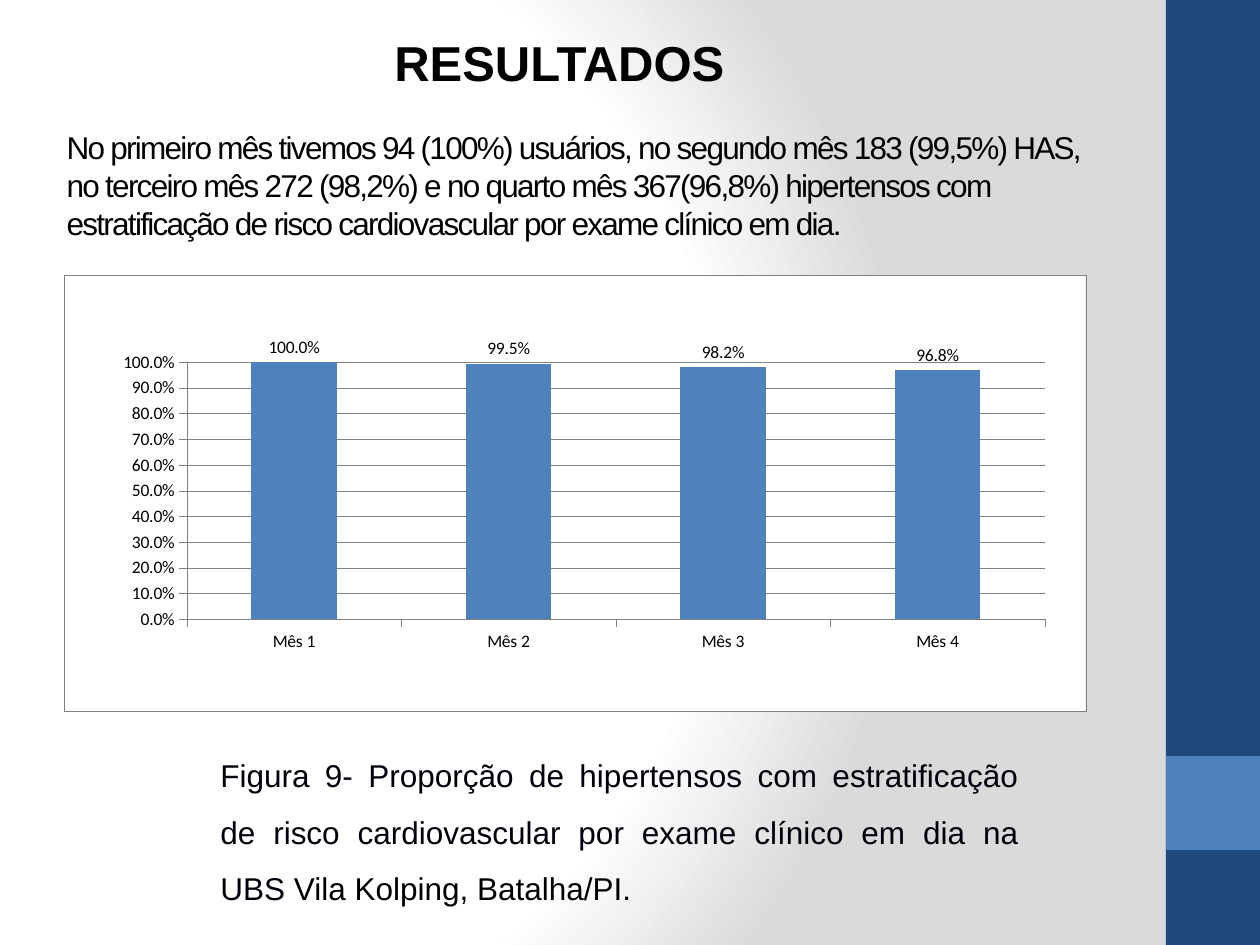
from lxml.etree import SubElement
from pptx import Presentation
from pptx.chart.data import CategoryChartData
from pptx.dml.color import RGBColor
from pptx.enum.chart import XL_CHART_TYPE, XL_LABEL_POSITION, XL_TICK_MARK
from pptx.enum.shapes import MSO_SHAPE
from pptx.enum.text import MSO_ANCHOR, MSO_AUTO_SIZE, PP_ALIGN
from pptx.oxml import parse_xml
from pptx.oxml.ns import nsdecls, qn
from pptx.util import Pt

PX = 914400 / 126
BLACK = RGBColor(0x00, 0x00, 0x00)
INK = RGBColor(0x00, 0x00, 0x0A)
WHITE = RGBColor(0xFF, 0xFF, 0xFF)
SILVER = RGBColor(0xDA, 0xDA, 0xDA)
GRAY = RGBColor(0x80, 0x80, 0x80)
NAVY = RGBColor(0x1F, 0x49, 0x7D)
BLUE = RGBColor(0x4F, 0x81, 0xBD)


def px(*values):
    """Turn pixel lengths into EMU."""
    return [round(v * PX) for v in values]


def set_background(s):
    """Give the slide a white to silver radial gradient."""
    stops = "".join(
        f'<a:gs pos="{pos}"><a:srgbClr val="{color}"/></a:gs>'
        for pos, color in ((0, WHITE), (75000, WHITE), (100000, SILVER)))
    bg = parse_xml(
        f'<p:bg {nsdecls("p", "a")}><p:bgPr><a:gradFill><a:gsLst>{stops}</a:gsLst>'
        '<a:path path="circle"><a:fillToRect l="20000" t="50000" r="100000" b="50000"/>'
        '</a:path></a:gradFill><a:effectLst/></p:bgPr></p:bg>')
    s.element.cSld.insert(0, bg)


def add_band(s, x, y, w, h, color):
    """Add a plain filled rectangle."""
    sp = s.shapes.add_shape(MSO_SHAPE.RECTANGLE, *px(x, y, w, h))
    sp.shadow.inherit = False
    sp.fill.solid()
    sp.fill.fore_color.rgb = color
    sp.line.fill.background()


def add_run(p, text, size=18, color=BLACK, bold=False, spacing=None):
    """Append a formatted run to a paragraph."""
    r = p.add_run()
    r.text = text
    f = r.font
    f.name, f.size, f.bold = "Arial", Pt(size), bold
    f.color.rgb = color
    if spacing is not None:
        r._r.get_or_add_rPr().set("spc", str(spacing * 100))


def add_title(s, x, y, w, h, text):
    """Place and fill the title placeholder."""
    sp = s.shapes.title
    sp.left, sp.top, sp.width, sp.height = px(x, y, w, h)
    tf = sp.text_frame
    tf.word_wrap = True
    tf.auto_size = MSO_AUTO_SIZE.NONE
    tf.vertical_anchor = MSO_ANCHOR.MIDDLE
    p = tf.paragraphs[0]
    p.alignment = PP_ALIGN.LEFT
    add_run(p, text, spacing=-1)


def add_text(s, x, y, w, h):
    """Add a wrapping text box and return its paragraph."""
    tf = s.shapes.add_textbox(*px(x, y, w, h)).text_frame
    tf.word_wrap = True
    tf.auto_size = MSO_AUTO_SIZE.SHAPE_TO_FIT_TEXT
    return tf.paragraphs[0]


def style_line(line):
    """Draw a thin gray line."""
    line.color.rgb = GRAY
    line.width = Pt(0.25)


def style_font(font):
    """Set the chart font."""
    font.name, font.size = "Calibri", Pt(10)
    font.color.rgb = BLACK


def style_axis(axis):
    """Format a chart axis."""
    axis.major_tick_mark = XL_TICK_MARK.OUTSIDE
    axis.minor_tick_mark = XL_TICK_MARK.NONE
    style_font(axis.tick_labels.font)
    style_line(axis.format.line)


def frame_chart(chart, layout):
    """Set the plot position, white fills and the chart border."""
    space = chart._chartSpace
    area = space.chart.plotArea
    for old in area.findall(qn("c:layout")):
        area.remove(old)
    box = SubElement(area, qn("c:layout"))
    area.insert(0, box)
    manual = SubElement(box, qn("c:manualLayout"))
    modes = [("layoutTarget", "inner"), ("xMode", "edge"), ("yMode", "edge")]
    for tag, val in modes + list(zip("xywh", layout)):
        SubElement(manual, qn(f"c:{tag}")).set("val", str(val))
    fill = f'<a:solidFill><a:srgbClr val="{WHITE}"/></a:solidFill>'
    border = f'<a:ln w="3175"><a:solidFill><a:srgbClr val="{GRAY}"/></a:solidFill></a:ln>'
    for after, line in ((area[-1], "<a:ln><a:noFill/></a:ln>"), (space.chart, border)):
        after.addnext(parse_xml(
            f'<c:spPr {nsdecls("c", "a")}>{fill}{line}</c:spPr>'))


def add_column_chart(s, x, y, w, h, cats, vals):
    """Add the monthly proportion chart."""
    data = CategoryChartData(number_format="0.0%")
    data.categories = cats
    data.add_series("Series 1", vals)
    chart = s.shapes.add_chart(
        XL_CHART_TYPE.COLUMN_CLUSTERED, *px(x, y, w, h), data).chart
    chart.has_legend = chart.has_title = False
    style_font(chart.font)
    style_axis(chart.category_axis)
    axis = chart.value_axis
    style_axis(axis)
    axis.minimum_scale, axis.maximum_scale, axis.major_unit = 0, 1, 0.1
    axis.tick_labels.number_format = "0.0%"
    axis.tick_labels.number_format_is_linked = False
    style_line(axis.major_gridlines.format.line)
    plot = chart.plots[0]
    plot.vary_by_categories = False
    plot.gap_width = 150
    fill = plot.series[0].format.fill
    fill.solid()
    fill.fore_color.rgb = BLUE
    plot.has_data_labels = True
    labels = plot.data_labels
    labels.show_value = True
    labels.number_format = "0.0%"
    labels.number_format_is_linked = False
    labels.position = XL_LABEL_POSITION.OUTSIDE_END
    style_font(labels.font)
    frame_chart(chart, (0.12, 0.2, 0.84, 0.59))


def main():
    """Build the results slide."""
    prs = Presentation()
    prs.slide_width, prs.slide_height = px(1260, 945)
    s = prs.slides.add_slide(prs.slide_layouts[5])
    set_background(s)
    add_band(s, 1166, 0, 94, 945, NAVY)
    add_band(s, 1166, 756, 94, 94, BLUE)
    add_title(s, 54, 106, 1050, 158,
              "No primeiro mês tivemos 94 (100%) usuários, no segundo mês 183 (99,5%) HAS, "
              "no terceiro mês 272 (98,2%) e no quarto mês 367(96,8%) hipertensos com "
              "estratificação de risco cardiovascular por exame clínico em dia.")
    p = add_text(s, 84, 731, 1022, 184)
    p.alignment = PP_ALIGN.JUSTIFY
    p.line_spacing = 1.5
    margins = p._p.get_or_add_pPr()
    for side, length in zip(("marL", "marR"), px(124, 75)):
        margins.set(side, str(length))
    add_run(p, "Figura 9- Proporção de hipertensos com estratificação de risco "
               "cardiovascular por exame clínico em dia na UBS", color=INK)
    add_run(p, " Vila Kolping, Batalha/PI.")
    add_column_chart(s, 64, 275, 1022, 436,
                     [f"Mês {n}" for n in range(1, 5)], (1, 0.995, 0.982, 0.968))
    add_run(add_text(s, 382, 26, 377, 72), "RESULTADOS", size=28, bold=True)
    prs.save("out.pptx")


if __name__ == "__main__":
    main()
